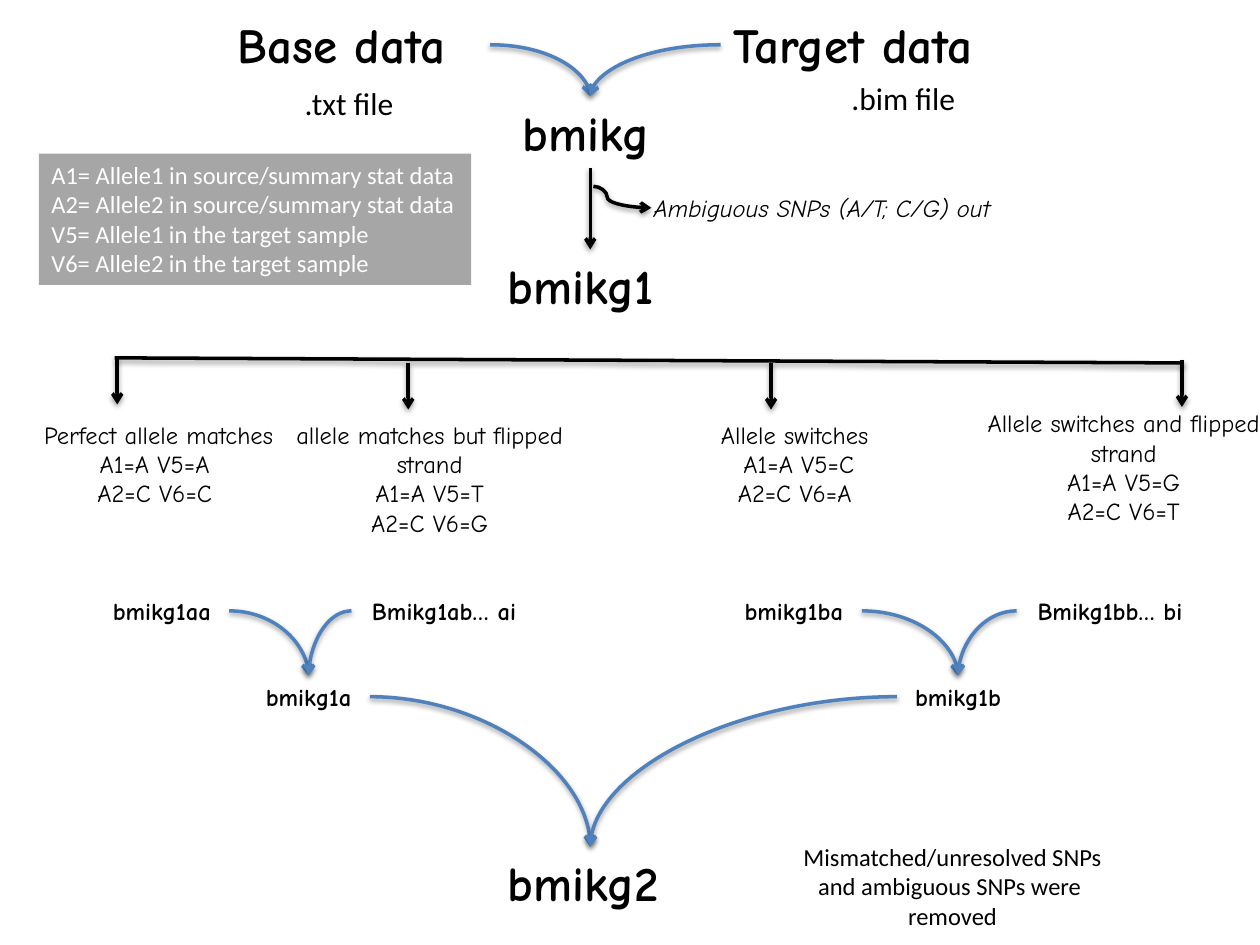
"""Build the allele matching flow slide."""
from lxml.etree import SubElement
from pptx import Presentation
from pptx.dml.color import RGBColor
from pptx.enum.shapes import MSO_CONNECTOR, MSO_SHAPE
from pptx.enum.text import MSO_ANCHOR, MSO_AUTO_SIZE, PP_ALIGN
from pptx.oxml.ns import qn
from pptx.util import Pt

COLORS = {"black": "000000", "white": "FFFFFF", "blue": "4F81BD", "gray": "A6A6A6"}
HAND, PLAIN = "Comic Neue", "Calibri"
LINE_HEIGHTS = {28: 41.2, 18: 29, 14: 24.2}

NODES = {
    "Base data": (128.9, 5, 151.2, 28),
    "Target data": (411.8, 5, 181.4, 28),
    "bmikg": (291.6, 54.9, 91.4, 28),
    "bmikg1": (283, 142.5, 108.7, 28),
    "bmikg1aa": (54, 337, 77, 14),
    "Bmikg1ab… ai": (200.9, 337, 105.8, 14),
    "bmikg1ba": (414.7, 337, 77.8, 14),
    "Bmikg1bb… bi": (581, 337, 106.6, 14),
    "bmikg1a": (141.5, 386, 69.8, 14),
    "bmikg1b": (512.6, 386, 69.8, 14),
    "bmikg2": (283, 483.8, 108.7, 28),
}
MERGES = [
    ("Base data", "Target data", "bmikg"),
    ("bmikg1aa", "Bmikg1ab… ai", "bmikg1a"),
    ("bmikg1ba", "Bmikg1bb… bi", "bmikg1b"),
    ("bmikg1a", "bmikg1b", "bmikg2"),
]
CASES = [
    (["Perfect allele matches", "A1=A V5=A ", "A2=C V6=C "], (9.4, 236.2, 162.7, 58.2), False),
    (["allele matches but flipped strand", "A1=A V5=T", "A2=C V6=G"], (157, 236.2, 177.1, 75), True),
    (["Allele switches ", "A1=A V5=C", "A2=C V6=A "], (399.6, 236.2, 113.8, 58.2), False),
    (["Allele switches and flipped strand", "A1=A V5=G", "A2=C V6=T"], (550, 229.7, 184.3, 75), True),
]
FILE_TYPES = [(".txt file", (167, 44.6, 66.2, 29)), (".bim file", (479.5, 41.8, 74.2, 29))]
LEGEND = [
    "A1= Allele1 in source/summary stat data",
    "A2= Allele2 in source/summary stat data",
    "V5= Allele1 in the target sample",
    "V6= Allele2 in the target sample",
]
REMOVED = ["Mismatched/unresolved SNPs and ambiguous SNPs were ", "removed"]
RAIL = (65.5, 204.5, 676, 207.4)
DROPS = [(67, 204.5), (233.3, 207.4), (440.6, 207.4), (675.4, 205.9)]
DROP_LENGTH = 26.6


def write(shape, lines, size, font=HAND, color="black", bold=False, italic=False,
          centered=False, wrap=False):
    frame = shape.text_frame
    frame.text = "\n".join(lines)
    frame.word_wrap = wrap
    frame.auto_size = MSO_AUTO_SIZE.SHAPE_TO_FIT_TEXT
    frame.vertical_anchor = MSO_ANCHOR.TOP
    for paragraph in frame.paragraphs:
        paragraph.alignment = PP_ALIGN.CENTER if centered else PP_ALIGN.LEFT
        paragraph.font.name = font
        paragraph.font.size = Pt(size)
        paragraph.font.bold = bold
        paragraph.font.italic = italic
        paragraph.font.color.rgb = RGBColor.from_string(COLORS[color])


def add_text(slide, lines, box, size, **style):
    write(slide.shapes.add_textbox(*map(Pt, box)), lines, size, **style)


def add_line(slide, ends, color="black", arrow=True, curve=None, bend=None):
    kind = MSO_CONNECTOR.CURVE if curve else MSO_CONNECTOR.STRAIGHT
    connector = slide.shapes.add_connector(kind, *map(Pt, ends))
    connector.line.color.rgb = RGBColor.from_string(COLORS[color])
    connector.line.width = Pt(2)
    properties = connector._element.spPr
    if curve:
        geometry = properties.find(qn("a:prstGeom"))
        geometry.set("prst", curve)
        if bend:
            guides = geometry.get_or_add_avLst()
            SubElement(guides, qn("a:gd"), name="adj1", fmla=f"val {bend}")
    if arrow:
        SubElement(properties.find(qn("a:ln")), qn("a:tailEnd"), type="arrow")
    effects = SubElement(properties, qn("a:effectLst"))
    shadow = SubElement(effects, qn("a:outerShdw"), blurRad=str(Pt(3.1)), dist=str(Pt(1.6)),
                        dir="5400000", rotWithShape="0")
    shade = SubElement(shadow, qn("a:srgbClr"), val=COLORS["black"])
    SubElement(shade, qn("a:alpha"), val="38000")


def add_nodes(slide):
    for name, (left, top, width, size) in NODES.items():
        add_text(slide, [name], (left, top, width, LINE_HEIGHTS[size]), size,
                 bold=True, centered=size == 14)


def add_merges(slide):
    for first, second, result in MERGES:
        left, top, width, size = NODES[first]
        middle = top + LINE_HEIGHTS[size] / 2
        result_left, result_top, result_width, _ = NODES[result]
        tip = result_left + result_width / 2
        for start in (left + width, NODES[second][0]):
            add_line(slide, (start, middle, tip, result_top), "blue", curve="curvedConnector2")


def add_filter_step(slide):
    left, top, width, size = NODES["bmikg"]
    center = left + width / 2
    add_line(slide, (center, top + LINE_HEIGHTS[size], center, NODES["bmikg1"][1]))
    add_line(slide, (339.1, 106.5, 372.2, 118.8), curve="curvedConnector3", bend=23900)
    add_text(slide, ["Ambiguous SNPs (A/T; C/G) out"], (366.5, 106.5, 230.4, 24.2), 14, italic=True)


def add_cases(slide):
    add_line(slide, RAIL, arrow=False)
    for x, y in DROPS:
        add_line(slide, (x, y, x, y + DROP_LENGTH))
    for lines, box, wrap in CASES:
        add_text(slide, lines, box, 14, centered=True, wrap=wrap)


def add_notes(slide):
    for label, box in FILE_TYPES:
        add_text(slide, [label], box, 18, font=PLAIN)
    legend = slide.shapes.add_shape(MSO_SHAPE.RECTANGLE, *map(Pt, (22.3, 87.8, 247, 75)))
    legend.shadow.inherit = False
    legend.fill.solid()
    legend.fill.fore_color.rgb = RGBColor.from_string(COLORS["gray"])
    legend.line.fill.background()
    write(legend, LEGEND, 14, font=PLAIN, color="white")
    add_text(slide, REMOVED, (440.6, 477.4, 207.4, 58.2), 14, font=PLAIN, centered=True, wrap=True)


def main():
    presentation = Presentation()
    presentation.slide_width, presentation.slide_height = Pt(720), Pt(540)
    slide = presentation.slides.add_slide(presentation.slide_layouts[6])
    for add_part in (add_nodes, add_filter_step, add_cases, add_merges, add_notes):
        add_part(slide)
    presentation.save("out.pptx")


if __name__ == "__main__":
    main()
